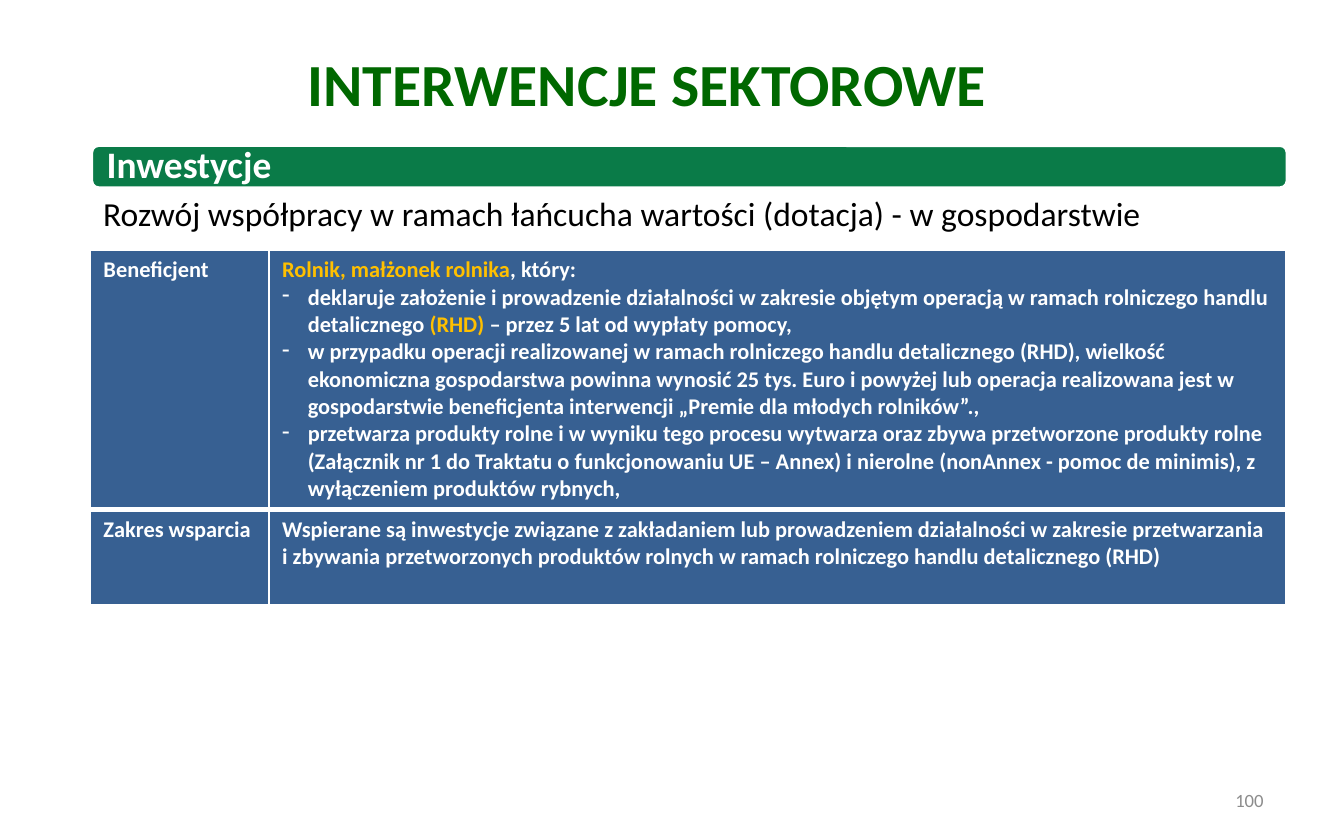
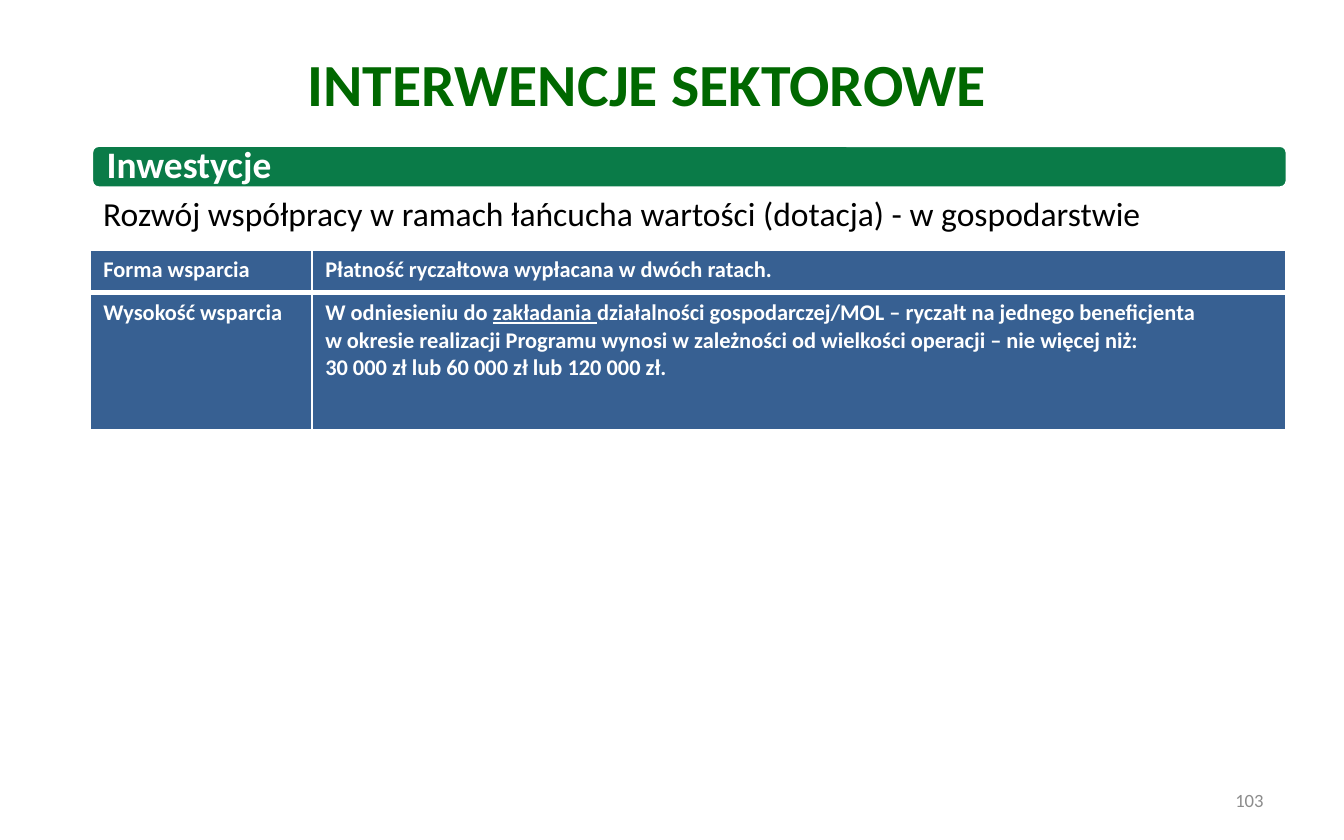
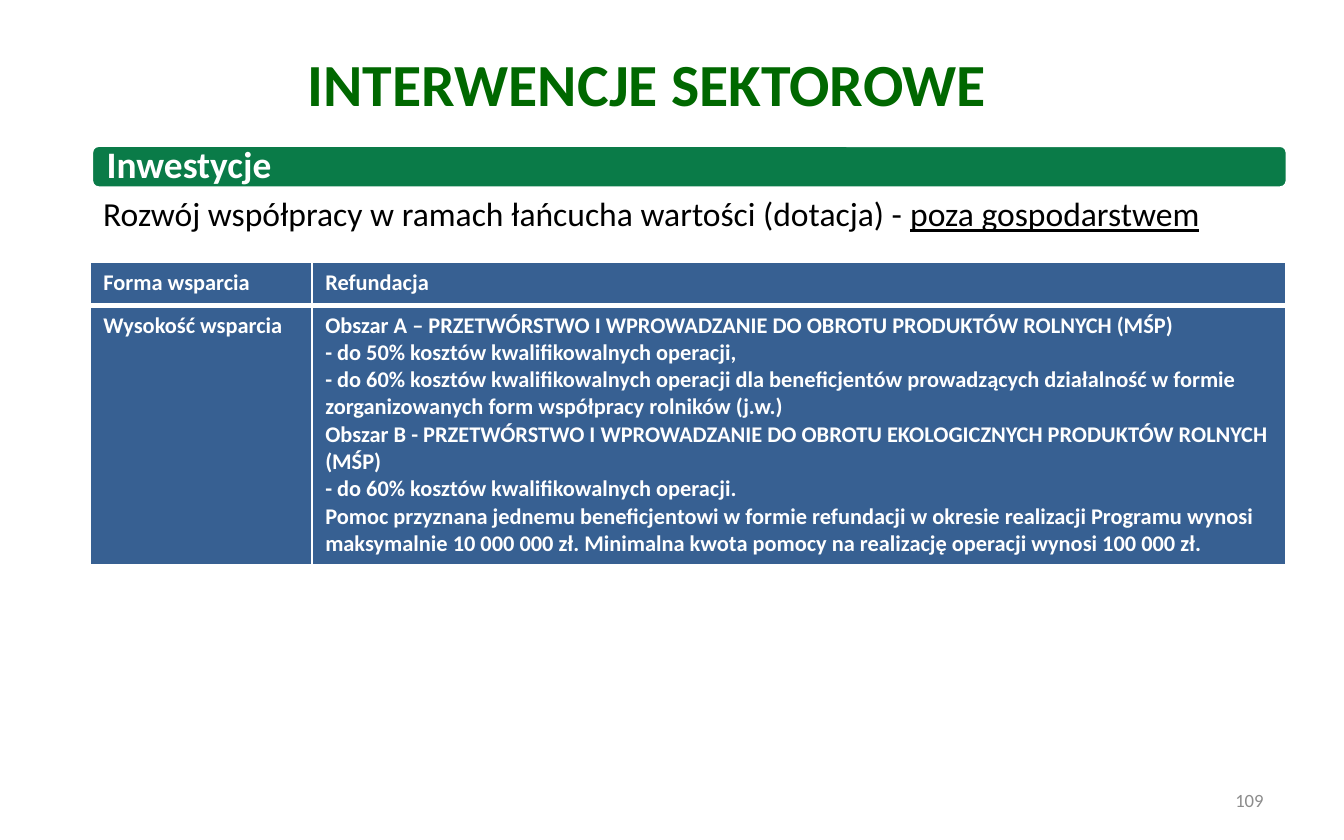
from copy import deepcopy

from lxml import etree
from pptx import Presentation
from pptx.dml.color import RGBColor
from pptx.enum.shapes import MSO_SHAPE
from pptx.enum.text import MSO_ANCHOR, MSO_AUTO_SIZE, PP_ALIGN
from pptx.oxml.ns import qn
from pptx.util import Emu, Pt

ROUND = MSO_SHAPE.ROUNDED_RECTANGLE
TOP, MIDDLE = MSO_ANCHOR.TOP, MSO_ANCHOR.MIDDLE
FIXED, GROW = MSO_AUTO_SIZE.NONE, MSO_AUTO_SIZE.SHAPE_TO_FIT_TEXT
LEFT, CENTER, RIGHT = PP_ALIGN.LEFT, PP_ALIGN.CENTER, PP_ALIGN.RIGHT

WHITE, BLACK, GRAY = "FFFFFF", "000000", "8C8C8C"
DARK, GREEN, BLUE, GOLD = "006800", "0A7B48", "376092", "FFC000"
LINE = "underline"


def px(n):
    return Emu(n * 9144)


def rgb(code):
    return RGBColor.from_string(code)


class Deck:
    """Holds the shared style and the current slide."""

    font = "Calibri"
    indent = 19

    def __init__(self):
        self.prs = Presentation()
        self.prs.slide_width, self.prs.slide_height = px(1000), px(625)
        self.slide = None

    def words(self, para, parts, size, color, bold=False, align=LEFT):
        para.alignment = align
        for part in [parts] if isinstance(parts, str) else parts:
            text, mark = (part, None) if isinstance(part, str) else part
            if text == "\n":
                para.add_line_break()
                continue
            run = para.add_run()
            run.text = text
            font = run.font
            font.name, font.size, font.bold = self.font, Pt(size), bold
            font.color.rgb = rgb(GOLD if mark == GOLD else color)
            if mark == LINE:
                font.underline = True
        for gap in para._p.findall(qn("a:br")):
            gap.append(deepcopy(para.runs[0]._r.rPr))

    def dash(self, para):
        props = para._p.get_or_add_pPr()
        props.set("marL", str(px(self.indent)))
        props.set("indent", str(-px(self.indent)))
        etree.SubElement(props, qn("a:buFontTx"))
        etree.SubElement(props, qn("a:buChar")).set("char", "-")

    def title(self, text):
        box = self.slide.shapes.title
        box.left, box.top, box.width, box.height = map(px, (188, 30, 587, 71))
        frame = box.text_frame
        frame.auto_size, frame.vertical_anchor = FIXED, TOP
        self.words(frame.paragraphs[0], text, 32, DARK, True, CENTER)

    def band(self, text):
        bar = self.slide.shapes.add_shape(ROUND, *map(px, (68, 108, 890, 32)))
        bar.shadow.inherit = False
        bar.fill.solid()
        bar.fill.fore_color.rgb = rgb(GREEN)
        bar.line.color.rgb = rgb(WHITE)
        bar.line.width = Pt(2)
        frame = bar.text_frame
        frame.vertical_anchor = MIDDLE
        frame.margin_top = frame.margin_bottom = 0
        para = frame.paragraphs[0]
        para.line_spacing = 0.9
        self.words(para, text, 20, WHITE, True)

    def label(self, area, parts, size, color, align=LEFT, anchor=TOP, fit=FIXED):
        frame = self.slide.shapes.add_textbox(*map(px, area)).text_frame
        frame.word_wrap = True
        frame.auto_size, frame.vertical_anchor = fit, anchor
        self.words(frame.paragraphs[0], parts, size, color, align=align)

    def edge(self, cell, base):
        props = cell._tc.get_or_add_tcPr()
        sides = (("lnL", 1), ("lnR", 1), ("lnT", 1), ("lnB", base))
        for spot, (side, width) in enumerate(sides):
            line = etree.Element(qn("a:" + side), w=str(Pt(width)))
            fill = etree.SubElement(line, qn("a:solidFill"))
            etree.SubElement(fill, qn("a:srgbClr")).set("val", WHITE)
            props.insert(spot, line)

    def cell(self, cell, paras, base):
        cell.fill.solid()
        cell.fill.fore_color.rgb = rgb(BLUE)
        self.edge(cell, base)
        frame = cell.text_frame
        for spot, (parts, listed) in enumerate(paras):
            para = frame.add_paragraph() if spot else frame.paragraphs[0]
            if listed:
                self.dash(para)
            self.words(para, parts, 12, WHITE, True)

    def table(self, top, cols, highs, rows):
        area = map(px, (67, top, sum(cols), sum(highs)))
        grid = self.slide.shapes.add_table(len(rows), len(cols), *area).table
        grid.first_row = grid.horz_banding = False
        for col, wide in zip(grid.columns, cols):
            col.width = px(wide)
        for spot, (row, high, (name, paras)) in enumerate(zip(grid.rows, highs, rows)):
            row.height = px(high)
            base = 1 if spot else 3
            self.cell(row.cells[0], [(name, False)], base)
            self.cell(row.cells[1], paras, base)

    def page(self, number, topic, top, cols, highs, rows):
        self.slide = self.prs.slides.add_slide(self.prs.slide_layouts[5])
        self.title("INTERWENCJE SEKTOROWE")
        self.label((717, 579, 233, 33), str(number), 10, GRAY, RIGHT, MIDDLE)
        self.band("Inwestycje")
        self.table(top, cols, highs, rows)
        lead = "Rozwój współpracy w ramach łańcucha wartości (dotacja) - "
        self.label((67, 139, 883, 40), [lead, topic], 18, BLACK, fit=GROW)


def plain(*paras):
    return [(parts, False) for parts in paras]


def listed(*paras):
    return [(parts, True) for parts in paras]


WHO = plain([("Rolnik, małżonek rolnika", GOLD), ", który:"]) + listed(
    ["deklaruje założenie i prowadzenie działalności w zakresie objętym operacją "
     "w ramach rolniczego handlu detalicznego ", ("(RHD) ", GOLD),
     "– przez 5 lat od wypłaty pomocy,"],
    "w przypadku operacji realizowanej w ramach rolniczego handlu detalicznego (RHD), "
    "wielkość ekonomiczna gospodarstwa powinna wynosić 25 tys. Euro i powyżej lub "
    "operacja realizowana jest w gospodarstwie beneficjenta interwencji "
    "„Premie dla młodych rolników”.,",
    "przetwarza produkty rolne i w wyniku tego procesu wytwarza oraz zbywa "
    "przetworzone produkty rolne (Załącznik nr 1 do Traktatu o funkcjonowaniu UE – "
    "Annex) i nierolne (nonAnnex - pomoc de minimis), z wyłączeniem produktów rybnych,",
)
SCOPE = plain(
    "Wspierane są inwestycje związane z zakładaniem lub prowadzeniem działalności "
    "w zakresie przetwarzania i zbywania przetworzonych produktów rolnych w ramach "
    "rolniczego handlu detalicznego (RHD)",
)
RATE = plain(
    ["W odniesieniu do ", ("zakładania ", LINE),
     "działalności gospodarczej/MOL – ryczałt na jednego beneficjenta ", "\n",
     "w okresie realizacji Programu wynosi w zależności od wielkości operacji – "
     "nie więcej niż:"],
    "30 000 zł lub 60 000 zł lub 120 000 zł.",
)
REFUND = plain(
    "Obszar A – PRZETWÓRSTWO I WPROWADZANIE DO OBROTU PRODUKTÓW ROLNYCH (MŚP)",
    "- do 50% kosztów kwalifikowalnych operacji,",
    "- do 60% kosztów kwalifikowalnych operacji dla beneficjentów prowadzących "
    "działalność w formie zorganizowanych form współpracy rolników (j.w.)",
    "Obszar B - PRZETWÓRSTWO I WPROWADZANIE DO OBROTU EKOLOGICZNYCH PRODUKTÓW "
    "ROLNYCH (MŚP)",
    "- do 60% kosztów kwalifikowalnych operacji.",
    "Pomoc przyznana jednemu beneficjentowi w formie refundacji w okresie realizacji "
    "Programu wynosi maksymalnie 10 000 000 zł. Minimalna kwota pomocy na realizację "
    "operacji wynosi 100 000 zł.",
)


def main():
    deck = Deck()
    farm, away = "w gospodarstwie", ("poza gospodarstwem", LINE)
    form, rate = "Forma wsparcia", "Wysokość wsparcia"
    cols = (165, 725)
    deck.page(100, farm, 186, (133, 757), (193, 71),
              [("Beneficjent", WHO), ("Zakres wsparcia", SCOPE)])
    deck.page(103, farm, 186, cols, (32, 102),
              [(form, plain("Płatność ryczałtowa wypłacana w dwóch ratach.")),
               (rate, RATE)])
    deck.page(109, away, 195, cols, (32, 193),
              [(form, plain("Refundacja")), (rate, REFUND)])
    deck.prs.save("out.pptx")


if __name__ == "__main__":
    main()
